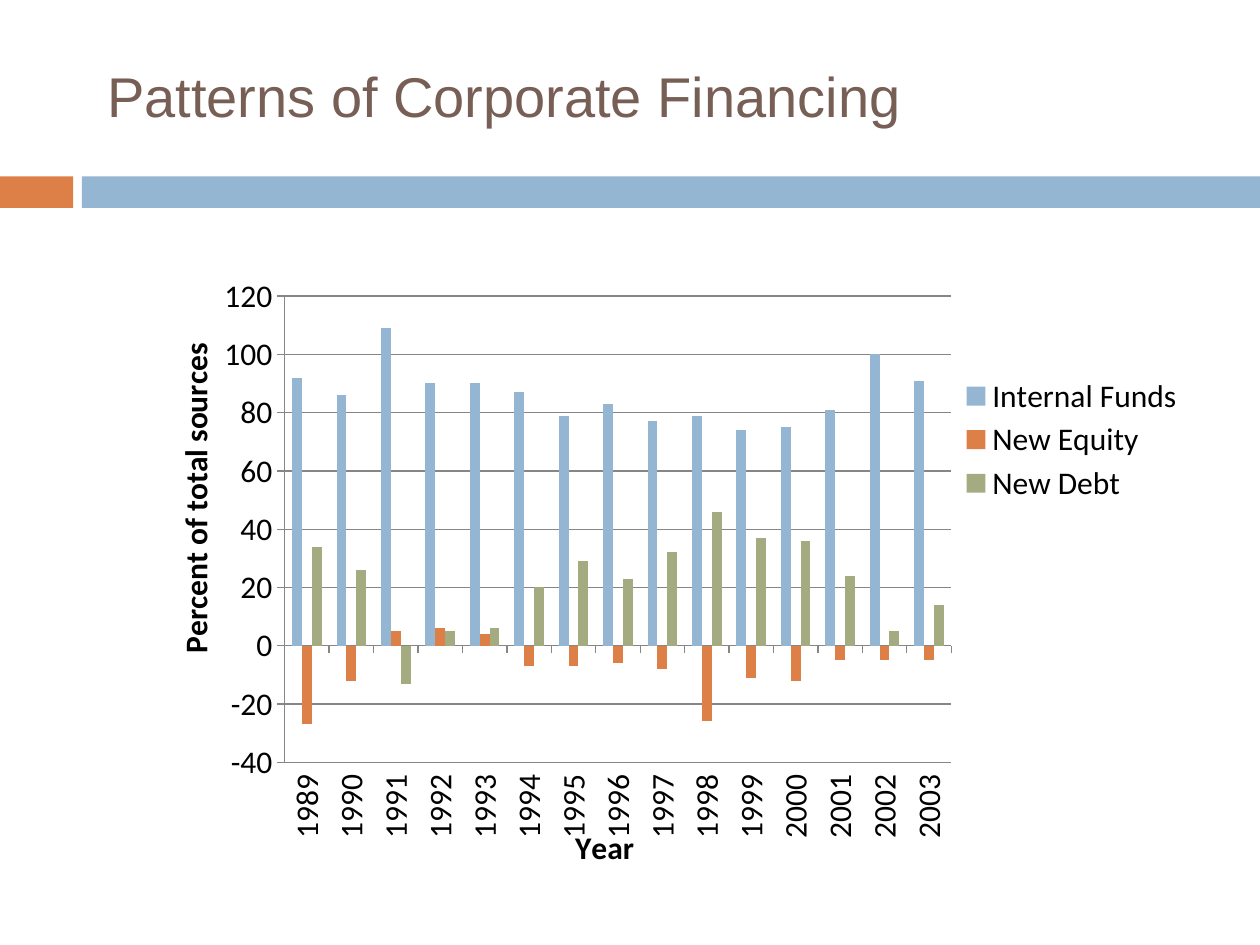
from lxml import etree
from pptx import Presentation
from pptx.chart.data import CategoryChartData
from pptx.dml.color import RGBColor
from pptx.enum.chart import XL_CHART_TYPE, XL_LEGEND_POSITION, XL_TICK_LABEL_POSITION, XL_TICK_MARK
from pptx.enum.shapes import MSO_SHAPE
from pptx.enum.text import MSO_ANCHOR, PP_ALIGN
from pptx.oxml.ns import qn
from pptx.util import Inches, Pt

COLUMNS = XL_CHART_TYPE.COLUMN_CLUSTERED
RECTANGLE = MSO_SHAPE.RECTANGLE
LEGEND_RIGHT = XL_LEGEND_POSITION.RIGHT
LABELS_LOW = XL_TICK_LABEL_POSITION.LOW
TICK_OUTSIDE = XL_TICK_MARK.OUTSIDE
TICK_NONE = XL_TICK_MARK.NONE
MIDDLE = MSO_ANCHOR.MIDDLE
LEFT = PP_ALIGN.LEFT

CHART_WIDTH, CHART_HEIGHT = 8.81, 5.14
COLORS = {
    "title": "775F55",
    "text": "000000",
    "axis": "868686",
    "blue": "94B6D2",
    "orange": "DD8047",
    "green": "A5AB81",
}
YEARS = [str(year) for year in range(1989, 2004)]
SERIES = [
    ("Internal Funds", "blue", [92, 86, 109, 90, 90, 87, 79, 83, 77, 79, 74, 75, 81, 100, 91]),
    ("New Equity", "orange", [-27, -12, 5, 6, 4, -7, -7, -6, -8, -26, -11, -12, -5, -5, -5]),
    ("New Debt", "green", [34, 26, -13, 5, 6, 20, 29, 23, 32, 46, 37, 36, 24, 5, 14]),
]


def rgb(name):
    return RGBColor.from_string(COLORS[name])


def set_font(font, name, size, color, bold=False):
    for attribute, value in {"name": name, "size": Pt(size), "bold": bold}.items():
        setattr(font, attribute, value)
    font.color.rgb = rgb(color)


def add_band(slide, left, width, color):
    shape = slide.shapes.add_shape(RECTANGLE, Inches(left), Inches(1.4), Inches(width), Inches(0.25))
    shape.shadow.inherit = False
    shape.fill.solid()
    shape.fill.fore_color.rgb = rgb(color)
    shape.line.fill.background()


def add_title(slide, text):
    title = slide.shapes.title
    box = {"left": 0.75, "top": 0.17, "width": 7.51, "height": 1.17}
    for attribute, value in box.items():
        setattr(title, attribute, Inches(value))
    frame = title.text_frame
    frame.text = text
    frame.vertical_anchor = MIDDLE
    paragraph = frame.paragraphs[0]
    paragraph.alignment = LEFT
    set_font(paragraph.runs[0].font, "Arial", 32, "title")


def place(element, inner=False, **inches):
    """Position a chart part by its offset and size in inches within the chart."""
    for old in element.findall(qn("c:layout")):
        element.remove(old)
    layout = etree.Element(qn("c:layout"))
    manual = etree.SubElement(layout, qn("c:manualLayout"))
    values = {"layoutTarget": "inner"} if inner else {}
    values.update(xMode="edge", yMode="edge")
    for tag, length in inches.items():
        values[tag] = length / (CHART_WIDTH if tag in "xw" else CHART_HEIGHT)
    for tag, value in values.items():
        etree.SubElement(manual, qn(f"c:{tag}")).set("val", str(value))
    overlay = element.find(qn("c:overlay"))
    if overlay is None:
        element.insert(0, layout)
    else:
        overlay.addprevious(layout)


def format_axis(axis, title, gridlines, x, y):
    settings = {
        "has_major_gridlines": gridlines,
        "major_tick_mark": TICK_OUTSIDE,
        "minor_tick_mark": TICK_NONE,
    }
    for attribute, value in settings.items():
        setattr(axis, attribute, value)
    lines = [axis.format.line]
    if gridlines:
        lines.append(axis.major_gridlines.format.line)
    for line in lines:
        line.color.rgb = rgb("axis")
        line.width = Pt(0.75)
    set_font(axis.tick_labels.font, "Calibri", 18, "text")
    frame = axis.axis_title.text_frame
    frame.text = title
    set_font(frame.paragraphs[0].runs[0].font, "Calibri", 18, "text", bold=True)
    place(axis.axis_title._element, x=x, y=y)


def add_financing_chart(slide):
    data = CategoryChartData()
    data.categories = YEARS
    for name, _, values in SERIES:
        data.add_series(name, values)
    frame = slide.shapes.add_chart(
        COLUMNS, Inches(0.97), Inches(2.06), Inches(CHART_WIDTH), Inches(CHART_HEIGHT), data
    )
    chart = frame.chart
    chart.has_title = False
    set_font(chart.font, "Calibri", 18, "text")

    plot = chart.plots[0]
    plot.vary_by_categories = False
    plot.gap_width = 150
    plot.overlap = 0
    for series, (_, color, _) in zip(plot.series, SERIES):
        series.invert_if_negative = False
        series.format.fill.solid()
        series.format.fill.fore_color.rgb = rgb(color)
    place(chart._chartSpace.chart.plotArea, inner=True, x=1.29, y=0.29, w=5.29, h=3.7)

    years, percent = chart.category_axis, chart.value_axis
    format_axis(years, "Year", False, 3.55, 4.45)
    format_axis(percent, "Percent of total sources", True, 0.36, 0.62)
    years.tick_label_position = LABELS_LOW
    years._element.find(qn("c:txPr")).find(qn("a:bodyPr")).set("rot", "-5400000")
    percent.axis_title.text_frame._txBody.bodyPr.set("rot", "-5400000")
    for attribute, value in {"minimum_scale": -40, "maximum_scale": 120, "major_unit": 20}.items():
        setattr(percent, attribute, value)

    chart.has_legend = True
    legend = chart.legend
    legend.position = LEGEND_RIGHT
    legend.include_in_layout = False
    set_font(legend.font, "Calibri", 18, "text")
    place(legend._element, x=6.52, y=0.89, w=2.03, h=1.08)


def main():
    presentation = Presentation()
    presentation.slide_width = Inches(10)
    presentation.slide_height = Inches(7.5)
    slide = presentation.slides.add_slide(presentation.slide_layouts[5])
    add_band(slide, 0, 0.58, "orange")
    add_band(slide, 0.65, 9.35, "blue")
    add_title(slide, "Patterns of Corporate Financing")
    add_financing_chart(slide)
    presentation.save("out.pptx")


if __name__ == "__main__":
    main()
